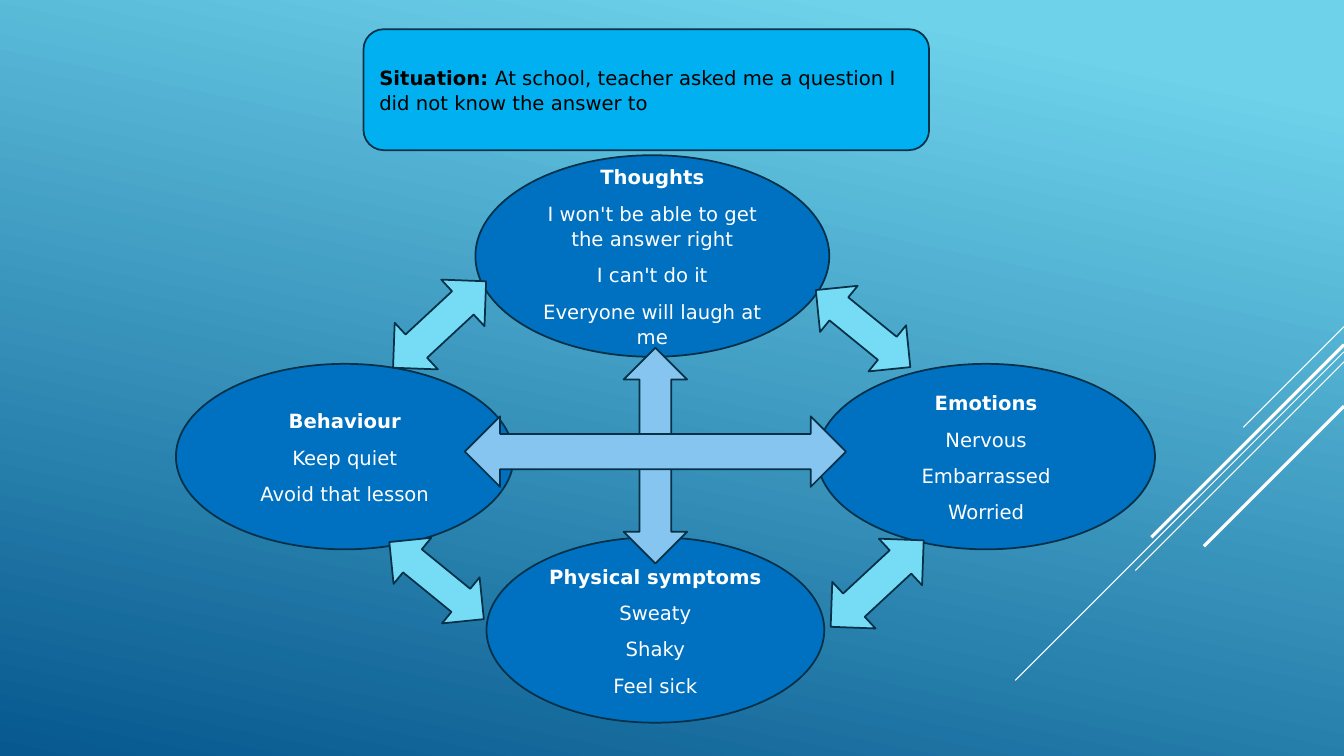
from lxml import etree
from pptx import Presentation
from pptx.dml.color import RGBColor
from pptx.enum.shapes import MSO_CONNECTOR, MSO_SHAPE
from pptx.enum.text import MSO_ANCHOR, PP_ALIGN
from pptx.oxml.ns import qn
from pptx.util import Inches, Pt

WIDTH, HEIGHT = 13.33, 7.5
FONT = "DejaVu Sans"
COLOURS = {
    "sky": "6ED2EB", "deep": "06588E", "streak": "FFFFFF", "outline": "043148",
    "situation": "00B0F0", "oval": "0070C0", "cycle": "76DBF4", "cross": "86C5EF",
    "dark text": "000000", "light text": "FFFFFF",
}

SITUATION = [[("Situation: ", True),
              ("At school, teacher asked me a question I did not know the answer to", False)]]

# Centre x, centre y, width, height, heading, lines
OVALS = [
    (6.47, 2.54, 3.51, 2.0, "Thoughts",
     ["I won't be able to get the answer right", "I can't do it", "Everyone will laugh at me"]),
    (9.78, 4.53, 3.35, 1.84, "Emotions", ["Nervous", "Embarrassed", "Worried"]),
    (6.5, 6.25, 3.35, 1.84, "Physical symptoms", ["Sweaty", "Shaky", "Feel sick"]),
    (3.42, 4.53, 3.35, 1.84, "Behaviour", ["Keep quiet", "Avoid that lesson"]),
]

# Arrow kinds: shape, width, height, rotation, colour
RISING = (MSO_SHAPE.UP_DOWN_ARROW, 0.63, 1.26, 47.1, "cycle")
FALLING = (MSO_SHAPE.UP_DOWN_ARROW, 0.59, 1.21, 129.2, "cycle")
UPRIGHT = (MSO_SHAPE.LEFT_RIGHT_ARROW, 2.14, 0.63, 90, "cross")
LEVEL = (MSO_SHAPE.LEFT_RIGHT_ARROW, 3.78, 0.7, 180, "cross")
ARROWS = [  # centre x, centre y, kind
    (4.36, 3.22, RISING), (8.56, 3.26, FALLING),
    (8.7, 5.79, RISING), (4.33, 5.76, FALLING),
    (6.5, 4.52, UPRIGHT), (6.5, 4.48, LEVEL),
]

# Diagonal streaks from the right edge: start y, horizontal run, line width
STREAKS = [(3.24, 1.0, 0.75), (3.49, 3.26, 0.75), (3.59, 2.07, 0.75),
           (3.42, 1.91, 2.25), (4.03, 1.39, 2.25)]


def colour(name):
    return RGBColor.from_string(COLOURS[name])


def paint_background(page):
    fill = page.background.fill
    fill.gradient()
    fill.gradient_angle = 360 - 102
    for stop, (position, name) in zip(fill.gradient_stops, [(0.1, "sky"), (1, "deep")]):
        stop.position = position
        stop.color.rgb = colour(name)


def add_streak(page, top, run, weight):
    ends = (WIDTH, top, WIDTH - run, top + run)
    streak = page.shapes.add_connector(MSO_CONNECTOR.STRAIGHT, *map(Inches, ends))
    streak.line.color.rgb = colour("streak")
    streak.line.width = Pt(weight)
    etree.SubElement(streak._element.spPr, qn("a:effectLst"))


def add_centred(page, kind, x, y, width, height, fill):
    """Add an outlined shape whose middle is at x, y."""
    frame = (x - width / 2, y - height / 2, width, height)
    shape = page.shapes.add_shape(kind, *map(Inches, frame))
    shape.shadow.inherit = False
    shape.fill.solid()
    shape.fill.fore_color.rgb = colour(fill)
    shape.line.color.rgb = colour("outline")
    shape.line.width = Pt(1.25)
    return shape


def write(shape, paragraphs, align, text_colour):
    """Fill a shape with paragraphs, each a list of (text, bold) runs."""
    frame = shape.text_frame
    frame.word_wrap = True
    frame.vertical_anchor = MSO_ANCHOR.MIDDLE
    for index, runs in enumerate(paragraphs):
        para = frame.add_paragraph() if index else frame.paragraphs[0]
        para.alignment = align
        para.line_spacing = 1.07
        para.space_after = Pt(8)
        for text, bold in runs:
            span = para.add_run()
            span.text = text
            span.font.name = FONT
            span.font.size = Pt(14)
            span.font.bold = bold
            span.font.color.rgb = colour(text_colour)


def main():
    deck = Presentation()
    deck.slide_width, deck.slide_height = Inches(WIDTH), Inches(HEIGHT)
    page = deck.slides.add_slide(deck.slide_layouts[6])
    paint_background(page)
    for streak in STREAKS:
        add_streak(page, *streak)

    box = add_centred(page, MSO_SHAPE.ROUNDED_RECTANGLE, 6.41, 0.89, 5.61, 1.2, "situation")
    write(box, SITUATION, PP_ALIGN.LEFT, "dark text")

    for x, y, width, height, heading, lines in OVALS:
        oval = add_centred(page, MSO_SHAPE.FLOWCHART_CONNECTOR, x, y, width, height, "oval")
        paragraphs = [[(heading, True)]] + [[(line, False)] for line in lines]
        write(oval, paragraphs, PP_ALIGN.CENTER, "light text")

    for x, y, (kind, width, height, rotation, fill) in ARROWS:
        arrow = add_centred(page, kind, x, y, width, height, fill)
        arrow.rotation = rotation

    deck.save("out.pptx")


if __name__ == "__main__":
    main()
